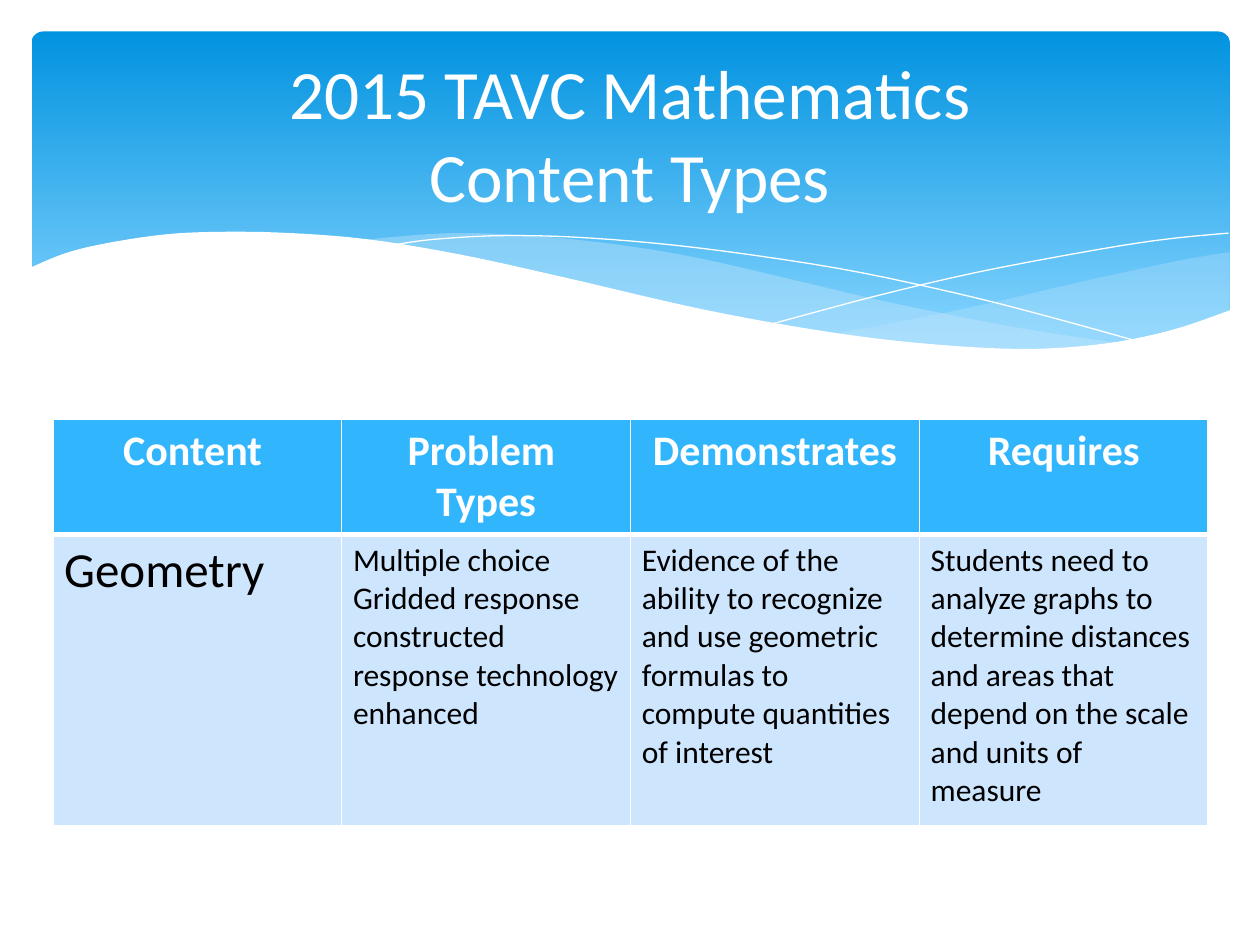
"""Build the geometry content slide: a wave banner, a title and a table."""
from lxml.etree import SubElement
from pptx import Presentation
from pptx.dml.color import RGBColor
from pptx.enum.shapes import MSO_SHAPE
from pptx.enum.text import MSO_ANCHOR, PP_ALIGN
from pptx.oxml.ns import qn
from pptx.util import Inches, Pt

HEX = {
    "white": "FFFFFF", "black": "000000", "deep": "0293E0", "sky": "83D3FE",
    "mist": "C6E7FC", "head": "31B6FD", "body": "CEE5FE",
}
HEAD = {"name": "Calibri", "size": Pt(24), "bold": True}
BODY = {"name": "Calibri", "size": Pt(18), "bold": False}
LEAD = {**BODY, "size": Pt(28)}
TITLE = {**BODY, "size": Pt(39.6)}
INSET = {"margin_left": Inches(0.09), "margin_right": Inches(0.09)}
ROWS = [
    ["Content ", "Problem \nTypes", "Demonstrates", "Requires"],
    [
        "Geometry",
        "Multiple choice\nGridded response constructed response technology enhanced",
        "Evidence of the ability to recognize and use geometric formulas "
        "to compute quantities of interest",
        "Students need to analyze graphs to determine distances and areas "
        "that depend on the scale and units of measure",
    ],
]
RIGHT_TOP = [(9.76, 2), (9.35, 2.07), (8.61, 2.23), (7.79, 2.42), (7.06, 2.57), (6.61, 2.65)]
RIGHT_LOW = [(6.61, 2.65), (7.05, 2.71), (7.57, 2.76), (8.14, 2.78), (8.63, 2.75),
             (9.13, 2.67), (9.49, 2.57), (9.76, 2.47)]
MID_TOP = [(8.93, 2.73), (8.07, 2.6), (7.06, 2.4), (6.29, 2.22), (5.55, 2.05), (4.89, 1.94),
           (4.2, 1.87), (3.61, 1.85), (3.13, 1.88), (2.86, 1.91)]
MID_LOW = [(2.86, 1.91), (3.62, 2.03), (4.49, 2.22), (5.3, 2.4), (6.01, 2.55), (6.8, 2.68),
           (7.48, 2.76), (8.18, 2.78), (8.93, 2.73)]
ARC = [(3.09, 1.95), (3.44, 1.9), (4.01, 1.87), (4.69, 1.89), (5.56, 1.97), (6.65, 2.13),
       (7.6, 2.33), (8.31, 2.51), (9.07, 2.72)]
RISE = [(6.13, 2.57), (6.95, 2.35), (7.76, 2.16), (8.66, 1.99), (9.24, 1.9), (9.75, 1.85)]
EDGE = [(9.77, 2.46), (9.3, 2.62), (8.75, 2.73), (8.09, 2.77), (7.26, 2.72), (6.48, 2.62),
        (5.55, 2.45), (4.47, 2.2), (3.65, 2.02), (2.92, 1.9), (2.3, 1.85), (1.77, 1.84),
        (1.32, 1.86), (0.85, 1.93), (0.52, 2.01), (0.23, 2.13)]


def tint(name):
    """Return the named colour."""
    return RGBColor.from_string(HEX[name])


def curve(knots, steps=5):
    """Return points on a smooth curve through the knots."""
    ends = [knots[0], *knots, knots[-1]]
    points = [knots[0]]
    for a, b, c, d in zip(ends, ends[1:], ends[2:], ends[3:]):
        for step in range(1, steps + 1):
            t = step / steps
            points.append(tuple(
                q + t * (r - p + t * (2 * p - 5 * q + 4 * r - s + t * (3 * q - p - 3 * r + s))) / 2
                for p, q, r, s in zip(a, b, c, d)))
    return points


def trace(slide, points, close):
    """Add a freeform through the points, without shadow."""
    spots = [(Inches(x), Inches(y)) for x, y in points]
    pen = slide.shapes.build_freeform(*spots[0])
    pen.add_line_segments(spots[1:], close=close)
    shape = pen.convert_to_shape()
    shape.shadow.inherit = False
    return shape


def add_wave(slide, points, color, alpha=100):
    """Add a filled wave with the given opacity in percent."""
    wave = trace(slide, points, True)
    wave.fill.solid()
    wave.fill.fore_color.rgb = tint(color)
    wave.line.fill.background()
    if alpha < 100:
        node = wave.element.spPr.find(".//" + qn("a:srgbClr"))
        SubElement(node, qn("a:alpha"), val=str(alpha * 1000))


def add_line(slide, knots):
    """Add a white hairline along the knots."""
    line = trace(slide, curve(knots), False)
    line.fill.background()
    line.line.color.rgb = tint("white")
    line.line.width = Pt(0)


def add_banner(slide):
    """Add the rounded banner with its gradient."""
    box = slide.shapes.add_shape(MSO_SHAPE.ROUNDED_RECTANGLE, Inches(0.25), Inches(0.25),
                                 Inches(9.51), Inches(2.7))
    box.adjustments[0] = 0.034
    box.shadow.inherit = False
    box.line.fill.background()
    box.fill.gradient()
    box.fill.gradient_angle = 270
    for stop, place, name in zip(box.fill.gradient_stops, (0, 0.9), ("deep", "sky")):
        stop.position = place
        stop.color.rgb = tint(name)


def put_text(frame, text, style, color, align):
    """Fill a text frame, one paragraph per line."""
    for i, line in enumerate(text.split("\n")):
        para = frame.add_paragraph() if i else frame.paragraphs[0]
        para.text = line
        para.alignment = align
        for run in para.runs:
            for key, value in style.items():
                setattr(run.font, key, value)
            run.font.color.rgb = tint(color)


def add_title(slide):
    """Add the centred title."""
    frame = slide.shapes.add_textbox(Inches(0.5), Inches(0.37), Inches(9), Inches(1.37)).text_frame
    frame.word_wrap = True
    frame.vertical_anchor = MSO_ANCHOR.MIDDLE
    put_text(frame, "2015 TAVC Mathematics\vContent Types", TITLE, "white", PP_ALIGN.CENTER)


def set_edges(cell, widths):
    """Draw white cell borders from a dict of side to points."""
    props = cell._tc.get_or_add_tcPr()
    for side, width in widths.items():
        line = SubElement(props, qn("a:ln" + side), w=str(Pt(width)))
        SubElement(SubElement(line, qn("a:solidFill")), qn("a:srgbClr"), val=HEX["white"])


def add_grid(slide):
    """Add the table of content types."""
    grid = slide.shapes.add_table(2, 4, Inches(0.42), Inches(3.33), Inches(9.17), Inches(3.21)).table
    for row, tall in zip(grid.rows, (0.9, 2.31)):
        row.height = Inches(tall)
    for r, texts in enumerate(ROWS):
        for c, text in enumerate(texts):
            cell = grid.cell(r, c)
            for key, value in INSET.items():
                setattr(cell, key, value)
            set_edges(cell, {"L": 1, "R": 1, "T": 3 if r else 1, "B": 1 if r else 3})
            cell.fill.solid()
            cell.fill.fore_color.rgb = tint("body" if r else "head")
            if r:
                style = BODY if c else LEAD
                put_text(cell.text_frame, text, style, "black", PP_ALIGN.LEFT)
            else:
                put_text(cell.text_frame, text, HEAD, "white", PP_ALIGN.CENTER)


def main():
    """Build and save the slide."""
    deck = Presentation()
    deck.slide_width, deck.slide_height = Inches(10), Inches(7.5)
    slide = deck.slides.add_slide(deck.slide_layouts[6])
    add_banner(slide)
    add_wave(slide, curve(RIGHT_TOP) + curve(RIGHT_LOW), "mist", 29)
    add_wave(slide, curve(MID_TOP) + curve(MID_LOW), "mist", 40)
    for knots in (ARC, RISE):
        add_line(slide, knots)
    add_wave(slide, curve(EDGE) + [(0.23, 3.29), (9.77, 3.29)], "white")
    add_grid(slide)
    add_title(slide)
    deck.save("out.pptx")


if __name__ == "__main__":
    main()
